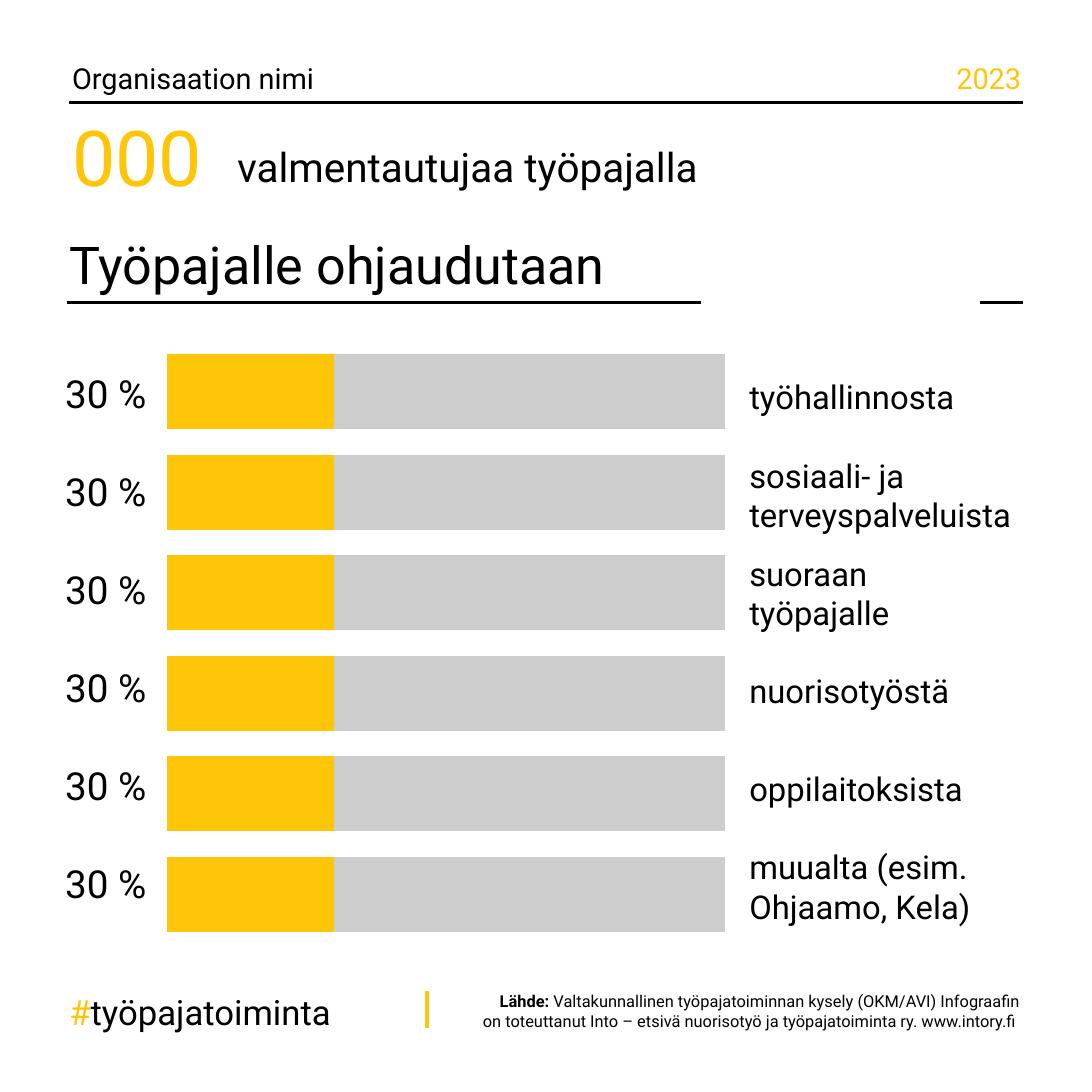
from lxml import etree
from pptx import Presentation
from pptx.chart.data import CategoryChartData
from pptx.dml.color import RGBColor
from pptx.enum.chart import XL_CHART_TYPE
from pptx.enum.shapes import MSO_CONNECTOR
from pptx.enum.text import MSO_ANCHOR, PP_ALIGN
from pptx.oxml import parse_xml
from pptx.oxml.ns import nsdecls, qn
from pptx.util import Inches, Pt

STACKED_BARS = XL_CHART_TYPE.BAR_STACKED_100
STRAIGHT = MSO_CONNECTOR.STRAIGHT
TOP, MIDDLE = MSO_ANCHOR.TOP, MSO_ANCHOR.MIDDLE
LEFT, RIGHT = PP_ALIGN.LEFT, PP_ALIGN.RIGHT

COLORS = {"text": "000000", "accent": "FFC609", "rest": "CDCDCD"}
FONT = "Roboto"
CHART_FONT = "Arial"

REFERRALS = [
    (30, ["työhallinnosta"]),
    (30, ["sosiaali- ja", "terveyspalveluista"]),
    (30, ["suoraan", "työpajalle"]),
    (30, ["nuorisotyöstä"]),
    (30, ["oppilaitoksista"]),
    (30, ["muualta (esim.", "Ohjaamo, Kela)"]),
]
HASHTAG = [("#", "accent", False), ("työpajatoiminta", "text", False)]
SOURCE = [
    ("Lähde:", "text", True),
    (" Valtakunnallinen työpajatoiminnan kysely (OKM/AVI) Infograafin on toteuttanut "
     "Into – etsivä nuorisotyö ja työpajatoiminta ry. www.intory.fi ", "text", False),
]

SIDE = 7.87
MARGIN = 0.5
RIGHT_EDGE = SIDE - MARGIN
LABEL_LEFT = 5.2
ROW_PITCH = 0.706
PERCENT_TOP = 2.57
PERCENT_HEIGHT = 0.61
LABEL_CENTRE = 2.86
LABEL_HEIGHT = 0.56
HEADER_TOP = 0.34
HEADER_RULE = 0.74
TITLE_RULE = 2.18
LINE_HEIGHT = Pt(24.8)

RULES = [
    ((MARGIN, HEADER_RULE), (RIGHT_EDGE, HEADER_RULE), "text", 1.5),
    ((0.48, TITLE_RULE), (5.05, TITLE_RULE), "text", 1.5),
    ((7.06, TITLE_RULE), (RIGHT_EDGE, TITLE_RULE), "text", 1.5),
    ((3.08, 7.41), (3.08, 7.14), "accent", 2),
]


def rgb(name):
    return RGBColor.from_string(COLORS[name])


def add_text(slide, box, lines, size, color="text", insets=(0, 0, 0, 0),
             anchor=TOP, align=LEFT, spacing=None):
    shape = slide.shapes.add_textbox(*map(Inches, box))
    frame = shape.text_frame
    frame.word_wrap = True
    frame.vertical_anchor = anchor
    (frame.margin_left, frame.margin_top,
     frame.margin_right, frame.margin_bottom) = map(Inches, insets)
    for index, line in enumerate(lines):
        paragraph = frame.add_paragraph() if index else frame.paragraphs[0]
        paragraph.alignment = align
        paragraph.line_spacing = spacing
        paragraph.font.name = FONT
        paragraph.font.size = Pt(size)
        paragraph.font.color.rgb = rgb(color)
        if isinstance(line, str):
            paragraph.add_run().text = line
            continue
        for text, run_color, bold in line:
            run = paragraph.add_run()
            run.text = text
            run.font.color.rgb = rgb(run_color)
            run.font.bold = bold


def add_rule(slide, start, end, color, width):
    rule = slide.shapes.add_connector(STRAIGHT, *map(Inches, start + end))
    rule.line.color.rgb = rgb(color)
    rule.line.width = Pt(width)
    etree.SubElement(rule._element.spPr, qn("a:effectLst"))


def add_bars(slide):
    shares = [share for share, _ in REFERRALS]
    data = CategoryChartData()
    data.categories = [str(number) for number in range(1, len(shares) + 1)]
    data.add_series("Series 1", shares)
    data.add_series("Series 2", [100 - share for share in shares])
    box = map(Inches, (1.12, 2.37, 4.19, 4.53))
    chart = slide.shapes.add_chart(STACKED_BARS, *box, data).chart
    chart.has_legend = False
    chart.has_title = False
    chart.font.name = CHART_FONT
    chart.font.size = Pt(10)
    chart.font.color.rgb = rgb("text")
    for axis in (chart.category_axis, chart.value_axis):
        axis.visible = False
        axis.has_major_gridlines = False
    plot = chart.plots[0]
    plot.gap_width = 34
    plot.overlap = 100
    plot.vary_by_categories = False
    for series, color in zip(plot.series, ("accent", "rest")):
        series.format.fill.solid()
        series.format.fill.fore_color.rgb = rgb(color)
    area = chart._chartSpace.chart.plotArea
    for layout in area.findall(qn("c:layout")):
        area.remove(layout)
    places = (("x", 0.02), ("y", 0.02), ("w", 0.96), ("h", 0.96))
    area.insert(0, parse_xml(
        f'<c:layout {nsdecls("c")}><c:manualLayout><c:layoutTarget val="inner"/>'
        '<c:xMode val="edge"/><c:yMode val="edge"/>'
        + "".join(f'<c:{name} val="{value}"/>' for name, value in places)
        + "</c:manualLayout></c:layout>"))


def main():
    presentation = Presentation()
    presentation.slide_width = presentation.slide_height = Inches(SIDE)
    slide = presentation.slides.add_slide(presentation.slide_layouts[6])

    add_text(slide, (MARGIN, HEADER_TOP, 4.27, 0.31), ["Organisaation nimi"], 15,
             insets=(0.02, 0, 0.04, 0.12), spacing=LINE_HEIGHT)
    add_text(slide, (6.37, HEADER_TOP, 0.99, 0.31), ["2023"], 15, "accent",
             insets=(0, 0, 0, 0.12), align=RIGHT, spacing=LINE_HEIGHT)
    add_text(slide, (MARGIN, 0.99, 1.11, 0.41), ["000"], 40, "accent",
             insets=(0.02, 0.12, 0, 0.12), spacing=LINE_HEIGHT)
    add_text(slide, (1.67, 0.97, 3.82, 0.45), ["valmentautujaa työpajalla"], 21,
             insets=(0.04, 0.05, 0.12, 0.05), anchor=MIDDLE)
    add_text(slide, (MARGIN, 1.62, 6.86, 0.56), ["Työpajalle ohjaudutaan"], 27,
             insets=(0, 0.05, 0.12, 0.05), anchor=MIDDLE)

    add_bars(slide)
    for row, (share, label) in enumerate(REFERRALS):
        offset = row * ROW_PITCH
        add_text(slide, (0.45, PERCENT_TOP + offset, 0.88, PERCENT_HEIGHT),
                 [f"{share} %"], 20, insets=(0.02, 0.14, 0, 0.31), spacing=LINE_HEIGHT)
        label_top = LABEL_CENTRE + offset - LABEL_HEIGHT / 2
        add_text(slide, (LABEL_LEFT, label_top, 2.22, LABEL_HEIGHT), label, 17,
                 insets=(0.2, 0, 0.08, 0), anchor=MIDDLE)

    for rule in RULES:
        add_rule(slide, *rule)
    add_text(slide, (MARGIN, 7.07, 2.4, 0.4), [HASHTAG], 18,
             insets=(0, 0.05, 0, 0.05), spacing=1.07)
    add_text(slide, (3.16, 7.14, 4.19, 0.29), [SOURCE], 8.5,
             insets=(0.31, 0, 0, 0), anchor=MIDDLE, align=RIGHT)
    presentation.save("out.pptx")


if __name__ == "__main__":
    main()
